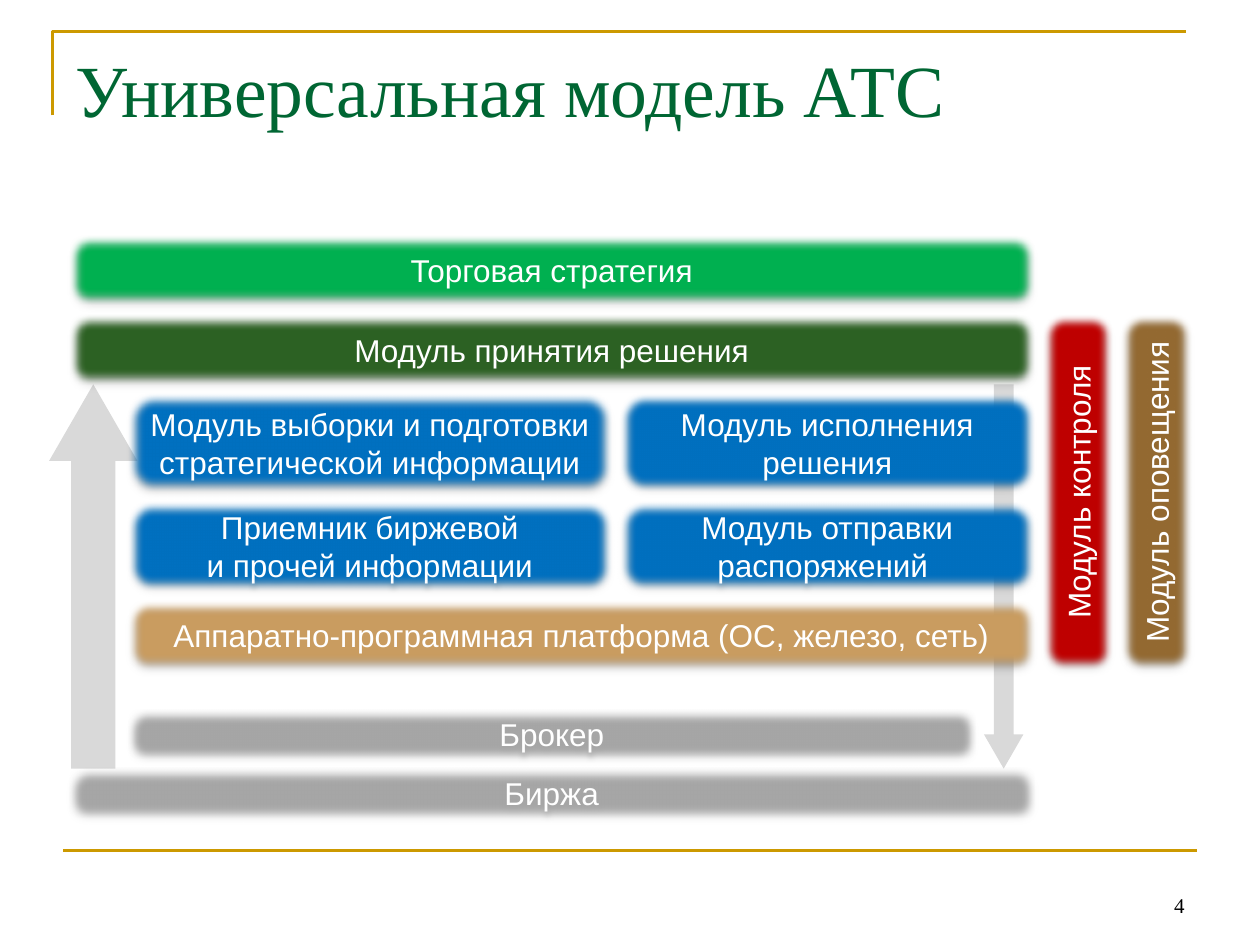
from dataclasses import dataclass

from lxml import etree
from pptx import Presentation
from pptx.dml.color import RGBColor
from pptx.enum.shapes import MSO_CONNECTOR, MSO_SHAPE
from pptx.enum.text import MSO_ANCHOR, MSO_AUTO_SIZE, PP_ALIGN
from pptx.oxml import parse_xml
from pptx.oxml.ns import nsdecls, qn
from pptx.util import Pt

ROUND_RECT, DOWN_ARROW = MSO_SHAPE.ROUNDED_RECTANGLE, MSO_SHAPE.DOWN_ARROW
STRAIGHT = MSO_CONNECTOR.STRAIGHT
LEFT, CENTER, RIGHT = PP_ALIGN.LEFT, PP_ALIGN.CENTER, PP_ALIGN.RIGHT
TOP, MIDDLE, BOTTOM = MSO_ANCHOR.TOP, MSO_ANCHOR.MIDDLE, MSO_ANCHOR.BOTTOM

SERIF, SANS = "Times New Roman", "Arial"
GOLD, BLUE, GREY, ARROW_GREY = "CC9900", "0070C0", "A6A6A6", "D9D9D9"

# Columns and widths of the diagram, in points
OUTER_X, INNER_X, RIGHT_X = 39.6, 73.44, 354.4
DIAGRAM_RIGHT = 591
OUTER_W, INNER_W = DIAGRAM_RIGHT - OUTER_X, DIAGRAM_RIGHT - INNER_X
LEFT_W, RIGHT_W = 275.8, DIAGRAM_RIGHT - RIGHT_X
BAR_H, THIN_H = 39.6, 28.1
UPPER_Y, UPPER_H = 224.8, 56.2
LOWER_Y, LOWER_H = 286.8, 50.4
SIDE_Y, SIDE_LEN = 180, 202.4
ARROW_Y, ARROW_H = 219.6, 219.6

EFFECTS = f"""<a:effectLst {nsdecls("a")}>
  <a:outerShdw blurRad="44450" dist="27940" dir="5400000" algn="ctr">
    <a:srgbClr val="000000"><a:alpha val="32000"/></a:srgbClr>
  </a:outerShdw>
  <a:softEdge rad="63500"/>
</a:effectLst>"""


@dataclass
class Block:
    text: str
    x: float
    y: float
    w: float
    h: float
    fill: str
    upright: bool = False


@dataclass
class Arrow:
    x: float
    w: float
    rotation: float


BLOCKS = [
    Block("Торговая стратегия", OUTER_X, 134.6, OUTER_W, BAR_H, "00B050"),
    Block("Аппаратно-программная платформа (ОС, железо, сеть)",
          INNER_X, 343.2, INNER_W, BAR_H, "C99C60"),
    Block("Модуль выборки и подготовки стратегической информации",
          INNER_X, UPPER_Y, LEFT_W, UPPER_H, BLUE),
    Block("Модуль исполнения решения", RIGHT_X, UPPER_Y, RIGHT_W, UPPER_H, BLUE),
    Block("Приемник биржевой\nи прочей информации",
          INNER_X, LOWER_Y, LEFT_W, LOWER_H, BLUE),
    Block("Модуль отправки распоряжений ", RIGHT_X, LOWER_Y, RIGHT_W, LOWER_H, BLUE),
    Block("Модуль принятия решения", OUTER_X, SIDE_Y, OUTER_W, BAR_H, "2C6123"),
    Block("Модуль контроля", 596.2, SIDE_Y, BAR_H, SIDE_LEN, "C00000", True),
    Block("Модуль оповещения", 641, SIDE_Y, BAR_H, SIDE_LEN, "946A32", True),
    Block("Брокер", INNER_X, 405.4, 483.8, THIN_H, GREY),
    Block("Биржа", OUTER_X, 438.8, OUTER_W, THIN_H, GREY),
]
ARROWS = [Arrow(562.3, 22.5, 0), Arrow(28.1, 50.4, 180)]


def rgb(color: str) -> RGBColor:
    return RGBColor.from_string(color)


def write(sp, text: str, *, size: float, font: str, color: str,
          align=LEFT, anchor=TOP) -> None:
    tf = sp.text_frame
    tf.text = text
    tf.word_wrap = True
    tf.auto_size = MSO_AUTO_SIZE.NONE
    tf.vertical_anchor = anchor
    for p in tf.paragraphs:
        p.alignment = align
        for r in p.runs:
            r.font.size, r.font.name = Pt(size), font
            r.font.color.rgb = rgb(color)


def place(sp, x: float, y: float, w: float, h: float) -> None:
    sp.left, sp.top, sp.width, sp.height = Pt(x), Pt(y), Pt(w), Pt(h)


def add_filled(s, kind, x: float, y: float, w: float, h: float, fill: str):
    sp = s.shapes.add_shape(kind, Pt(x), Pt(y), Pt(w), Pt(h))
    sp.shadow.inherit = False
    sp.fill.solid()
    sp.fill.fore_color.rgb = rgb(fill)
    sp.line.fill.background()
    return sp


def add_arrow(s, a: Arrow) -> None:
    sp = add_filled(s, DOWN_ARROW, a.x, ARROW_Y, a.w, ARROW_H, ARROW_GREY)
    sp.adjustments[0], sp.adjustments[1] = 0.5, 0.867
    sp.rotation = a.rotation


def add_block(s, b: Block) -> None:
    """Draw a soft-edged block; an upright one is turned about its centre."""
    x, y, w, h = b.x, b.y, b.w, b.h
    if b.upright:
        x, y, w, h = x + (w - h) / 2, y + (h - w) / 2, h, w
    sp = add_filled(s, ROUND_RECT, x, y, w, h, b.fill)
    sp.rotation = 270 if b.upright else 0
    props = sp._element.spPr
    props.replace(props.find(qn("a:effectLst")), parse_xml(EFFECTS))
    write(sp, b.text, size=18, font=SANS, color="FFFFFF",
          align=CENTER, anchor=MIDDLE)


def add_frame(s) -> None:
    """Draw the gold corner at the top and the gold rule at the bottom."""
    corner = s.shapes.build_freeform(Pt(30), Pt(66), scale=1.0)
    corner.add_line_segments([(Pt(30), Pt(18)), (Pt(678), Pt(18))], close=False)
    sp = corner.convert_to_shape()
    sp.shadow.inherit = False
    sp.fill.background()
    rule = s.shapes.add_connector(STRAIGHT, Pt(36), Pt(486), Pt(684), Pt(486))
    etree.SubElement(rule._element.spPr, qn("a:effectLst"))
    for shape in (sp, rule):
        shape.line.color.rgb = rgb(GOLD)
        shape.line.width = Pt(1.5)


def main() -> None:
    prs = Presentation()
    prs.slide_width, prs.slide_height = Pt(720), Pt(540)
    s = prs.slides.add_slide(prs.slide_layouts[5])

    add_frame(s)
    for arrow in ARROWS:
        add_arrow(s, arrow)

    title = s.shapes.title
    place(title, 36, 21.6, 648, 90)
    write(title, "Универсальная модель АТС", size=42, font=SERIF, color="006633")

    number = s.shapes.add_textbox(Pt(516), Pt(492), Pt(168), Pt(36))
    write(number, "4", size=12, font=SERIF, color="000000",
          align=RIGHT, anchor=BOTTOM)

    for block in BLOCKS:
        add_block(s, block)
    prs.save("out.pptx")


if __name__ == "__main__":
    main()
